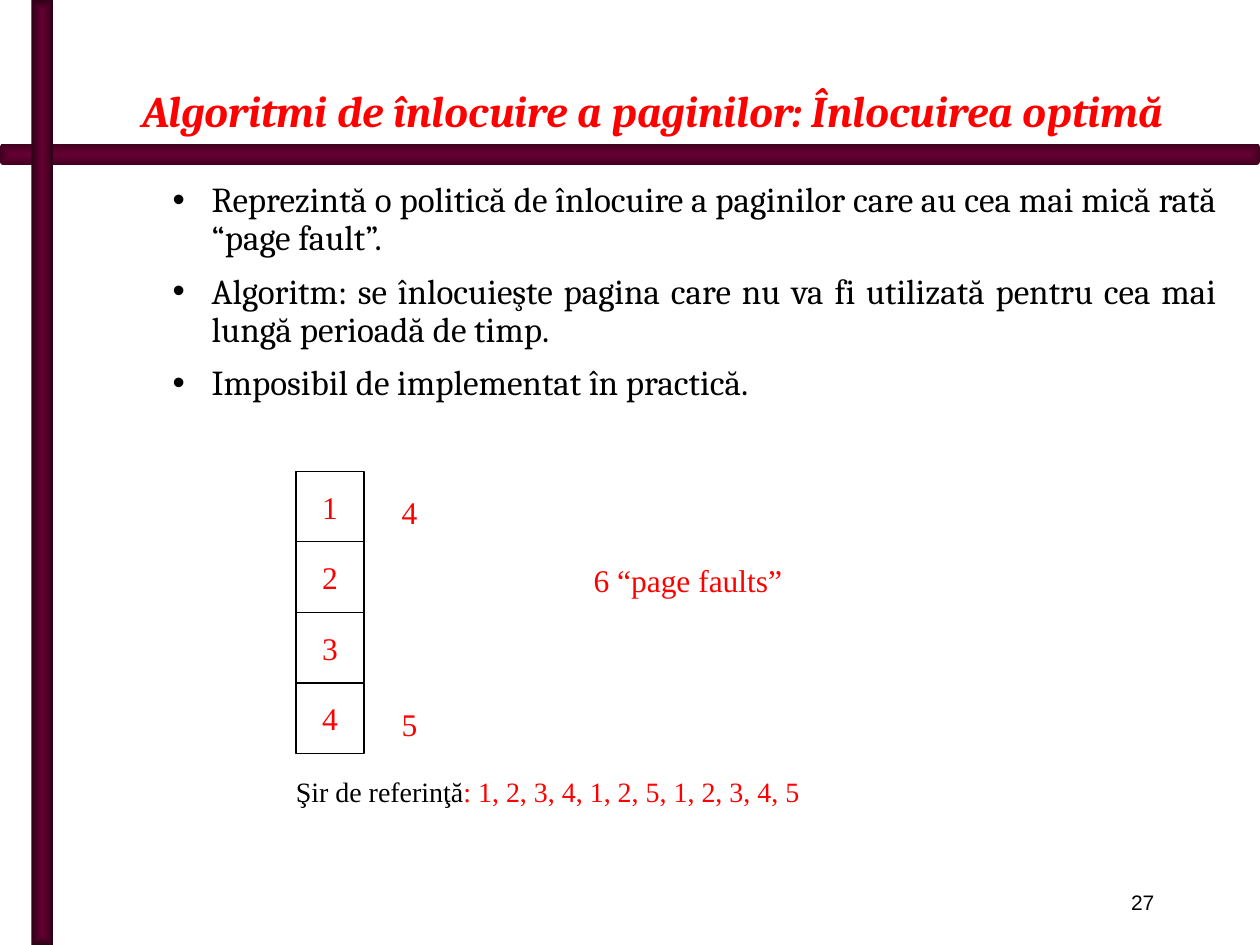
from lxml import etree
from pptx import Presentation
from pptx.dml.color import RGBColor
from pptx.enum import shapes, text
from pptx.oxml import ns
from pptx.util import Inches, Pt

BLACK = RGBColor(0x00, 0x00, 0x00)
WHITE = RGBColor(0xFF, 0xFF, 0xFF)
RED = RGBColor(0xFF, 0x00, 0x00)
PLUM = RGBColor(0x66, 0x00, 0x33)
PLUM_DARK = RGBColor(0x41, 0x00, 0x20)
PLUM_DEEP = RGBColor(0x2F, 0x00, 0x18)

COLUMNS, ROWS = 100, 75
HEADING_FONT, DIAGRAM_FONT, NUMBER_FONT = "Cambria", "Times New Roman", "Arial"
LEFT, CENTER = text.PP_ALIGN.LEFT, text.PP_ALIGN.CENTER
RIGHT, JUSTIFY = text.PP_ALIGN.RIGHT, text.PP_ALIGN.JUSTIFY


def write(para, words, font=DIAGRAM_FONT, size=18, color=RED, bold=False,
          italic=False, align=CENTER, line=1.0, before=0, after=0):
    """Add one formatted span to a paragraph."""
    para.alignment, para.line_spacing = align, line
    para.space_before, para.space_after = Pt(before), Pt(after)
    span = para.add_run()
    span.text = words
    span.font.name, span.font.size = font, Pt(size)
    span.font.bold, span.font.italic = bold, italic
    span.font.color.rgb = color


def add_bullet(para, indent, hanging):
    props = para._p.get_or_add_pPr()
    props.set("marL", str(Inches(indent)))
    props.set("indent", str(-Inches(hanging)))
    color = etree.SubElement(props, ns.qn("a:buClr"))
    etree.SubElement(color, ns.qn("a:srgbClr"), val=str(BLACK))
    etree.SubElement(props, ns.qn("a:buFont"), typeface=NUMBER_FONT)
    etree.SubElement(props, ns.qn("a:buChar"), char="•")


class SlideBuilder:
    """Places elements on a page measured in grid columns and rows."""

    def __init__(self, deck):
        self.column = deck.slide_width / COLUMNS
        self.row = deck.slide_height / ROWS
        self.page = deck.slides.add_slide(deck.slide_layouts[1])

    def area(self, left, top, width, height):
        return (round(left * self.column), round(top * self.row),
                round(width * self.column), round(height * self.row))

    def place(self, box, *grid):
        box.left, box.top, box.width, box.height = self.area(*grid)
        box.text_frame.auto_size = text.MSO_AUTO_SIZE.NONE
        return box.text_frame

    def title(self, words, *grid):
        frame = self.place(self.page.shapes.title, *grid)
        frame.vertical_anchor = text.MSO_ANCHOR.BOTTOM
        write(frame.paragraphs[0], words, font=HEADING_FONT, size=25,
              bold=True, italic=True, align=RIGHT)

    def bullets(self, items, *grid):
        frame = self.place(self.page.placeholders[1], *grid)
        frame.vertical_anchor = text.MSO_ANCHOR.TOP
        for number, words in enumerate(items):
            para = frame.add_paragraph() if number else frame.paragraphs[0]
            para.level = 1
            write(para, words, font=HEADING_FONT, size=20, color=BLACK,
                  align=JUSTIFY, line=0.9, before=4, after=5)
            add_bullet(para, 0.81, 0.31)

    def bar(self, kind, edge, *grid):
        bar = self.page.shapes.add_shape(kind, *self.area(*grid))
        bar.shadow.inherit = False
        bar.line.fill.background()
        bar.fill.gradient()
        for stop, color in zip(bar.fill.gradient_stops, (PLUM, edge)):
            stop.color.rgb = color
        # Shade from the centre outwards
        gradient = bar._element.spPr.find(ns.qn("a:gradFill"))
        gradient.remove(gradient.find(ns.qn("a:lin")))
        shade = etree.SubElement(gradient, ns.qn("a:path"))
        shade.set("path", "shape")
        etree.SubElement(shade, ns.qn("a:fillToRect"),
                         l="50000", t="50000", r="50000", b="50000")

    def frame_cell(self, words, *grid):
        cell = self.page.shapes.add_shape(shapes.MSO_SHAPE.RECTANGLE, *self.area(*grid))
        cell.shadow.inherit = False
        cell.fill.solid()
        cell.fill.fore_color.rgb = WHITE
        cell.line.color.rgb, cell.line.width = BLACK, Pt(0.75)
        cell.text_frame.word_wrap = False
        cell.text_frame.vertical_anchor = text.MSO_ANCHOR.MIDDLE
        write(cell.text_frame.paragraphs[0], words)

    def label(self, spans, *grid, anchor=text.MSO_ANCHOR.MIDDLE, wrap=False, **style):
        box = self.page.shapes.add_textbox(*self.area(*grid))
        box.text_frame.word_wrap = wrap
        box.text_frame.vertical_anchor = anchor
        for words, color in spans:
            write(box.text_frame.paragraphs[0], words, color=color, **style)


def main():
    deck = Presentation()
    deck.slide_width, deck.slide_height = Inches(10), Inches(7.5)
    slide = SlideBuilder(deck)

    # Crossing bars
    slide.bar(shapes.MSO_SHAPE.ROUNDED_RECTANGLE, PLUM_DARK, 0, 11.4, COLUMNS, 1.7)
    slide.bar(shapes.MSO_SHAPE.RECTANGLE, PLUM_DEEP, 2.5, 0, 1.7, ROWS)

    # Title and list
    slide.title("Algoritmi de înlocuire a paginilor: Înlocuirea optimă", 8.3, 1.7, 85, 9.6)
    slide.bullets([
        "Reprezintă o politică de înlocuire a paginilor care au cea mai mică rată “page fault”.",
        "Algoritm: se înlocuieşte pagina care nu va fi utilizată pentru cea mai lungă "
        "perioadă de timp.",
        "Imposibil de implementat în practică.",
    ], 7.7, 14, 89.9, 21.7)

    # Memory frames, with the page that replaces the first and the last
    top, height = 37.4, 5.6
    replacements = {0: "4", 3: "5"}
    for index, number in enumerate("1234"):
        cell_top = top + index * height
        slide.frame_cell(number, 23.5, cell_top, 5.4, height)
        if index in replacements:
            slide.label([(replacements[index], RED)], 30.3, cell_top + 1, 4.4, 4.5)

    # Result and reference string
    slide.label([("6 “page faults”", RED)], 43.2, 43.8, 22.8, 4.5)
    slide.label([("Şir de referinţă", BLACK), (": 1, 2, 3, 4, 1, 2, 5, 1, 2, 3, 4, 5", RED)],
                22.5, 61.3, 55.1, 3.9, anchor=text.MSO_ANCHOR.TOP,
                size=16, align=LEFT, line=0.9)

    # Page number
    slide.label([("27", BLACK)], 7.5, 70.1, 85.1, 3, wrap=True,
                font=NUMBER_FONT, size=12, align=RIGHT)

    deck.save("out.pptx")


if __name__ == "__main__":
    main()
